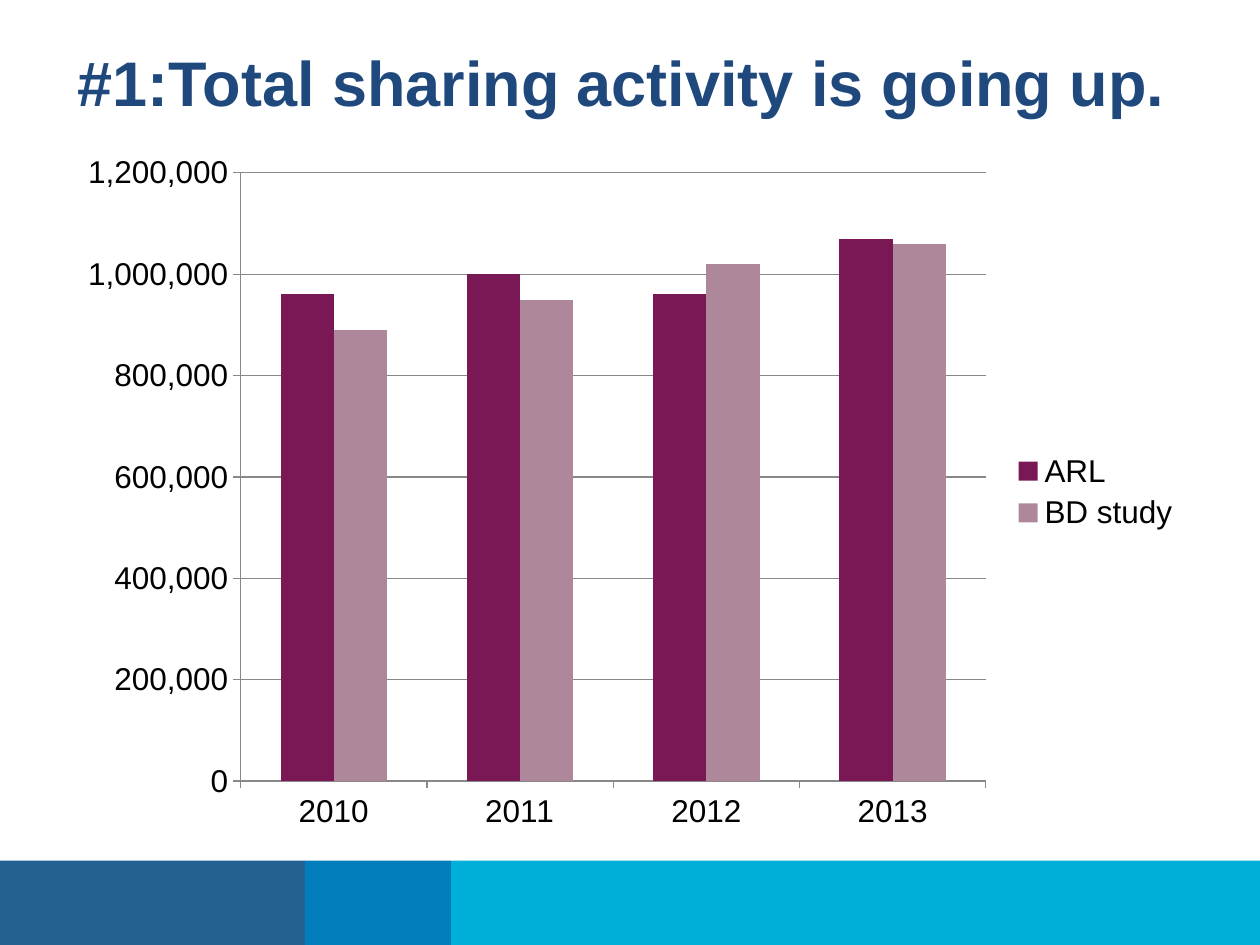
from pptx import Presentation
from pptx.chart.data import CategoryChartData
from pptx.dml.color import RGBColor
from pptx.enum.chart import XL_CHART_TYPE, XL_LEGEND_POSITION, XL_TICK_MARK
from pptx.enum.shapes import MSO_SHAPE
from pptx.util import Inches, Pt

FONT = "Arial"
GRAY = "888888"
LEFT, WIDTH = 0.52, 8.95
FOOTER_TOP, FOOTER_HEIGHT = 6.83, 0.67
FOOTER_BANDS = [(2.42, "236192"), (1.16, "007DBA"), (6.42, "00AFD7")]
YEARS = ["2010", "2011", "2012", "2013"]
SERIES = [
    ("ARL", [960000, 1000000, 960000, 1070000], "7A1856"),
    ("BD study", [890000, 950000, 1020000, 1060000], "AE889A"),
]


def rgb(color):
    return RGBColor.from_string(color)


def set_font(font, size, color, bold=False):
    font.name, font.size, font.bold = FONT, Pt(size), bold
    font.color.rgb = rgb(color)


def set_fill(fill, color):
    fill.solid()
    fill.fore_color.rgb = rgb(color)


def set_line(line, color):
    line.color.rgb = rgb(color)
    line.width = Pt(0.75)


def add_footer(s):
    left = 0
    for width, color in FOOTER_BANDS:
        sp = s.shapes.add_shape(MSO_SHAPE.RECTANGLE, Inches(left), Inches(FOOTER_TOP),
                                Inches(width), Inches(FOOTER_HEIGHT))
        sp.shadow.inherit = False
        set_fill(sp.fill, color)
        sp.line.fill.background()
        left += width


def add_title(s, text):
    tf = s.shapes.add_textbox(Inches(LEFT), Inches(0.3), Inches(WIDTH), Inches(0.9)).text_frame
    tf.word_wrap = True
    p = tf.paragraphs[0]
    p.text = text
    set_font(p.font, 36, "1F497D", bold=True)


def style_axis(axis):
    axis.major_tick_mark = XL_TICK_MARK.OUTSIDE
    axis.minor_tick_mark = XL_TICK_MARK.NONE
    set_line(axis.format.line, GRAY)
    set_font(axis.tick_labels.font, 18, "000000")


def add_column_chart(s):
    data = CategoryChartData(number_format="#,##0")
    data.categories = YEARS
    for name, values, _ in SERIES:
        data.add_series(name, values)
    chart = s.shapes.add_chart(XL_CHART_TYPE.COLUMN_CLUSTERED, Inches(LEFT), Inches(1.12),
                               Inches(WIDTH), Inches(5.57), data).chart
    chart.has_title = False
    set_font(chart.font, 18, "000000")

    plot = chart.plots[0]
    plot.gap_width = 150
    plot.overlap = 0
    plot.vary_by_categories = False
    for series, (_, _, color) in zip(plot.series, SERIES):
        set_fill(series.format.fill, color)

    for axis in (chart.category_axis, chart.value_axis):
        style_axis(axis)
    axis = chart.value_axis
    axis.minimum_scale, axis.maximum_scale, axis.major_unit = 0, 1200000, 200000
    axis.tick_labels.number_format = "#,##0"
    axis.tick_labels.number_format_is_linked = False
    axis.has_major_gridlines = True
    set_line(axis.major_gridlines.format.line, GRAY)

    chart.has_legend = True
    chart.legend.position = XL_LEGEND_POSITION.RIGHT
    chart.legend.include_in_layout = False
    set_font(chart.legend.font, 18, "000000")


def main():
    prs = Presentation()
    prs.slide_width, prs.slide_height = Inches(10), Inches(7.5)
    s = prs.slides.add_slide(prs.slide_layouts[6])
    add_footer(s)
    add_title(s, "#1:Total sharing activity is going up.")
    add_column_chart(s)
    prs.save("out.pptx")


if __name__ == "__main__":
    main()
